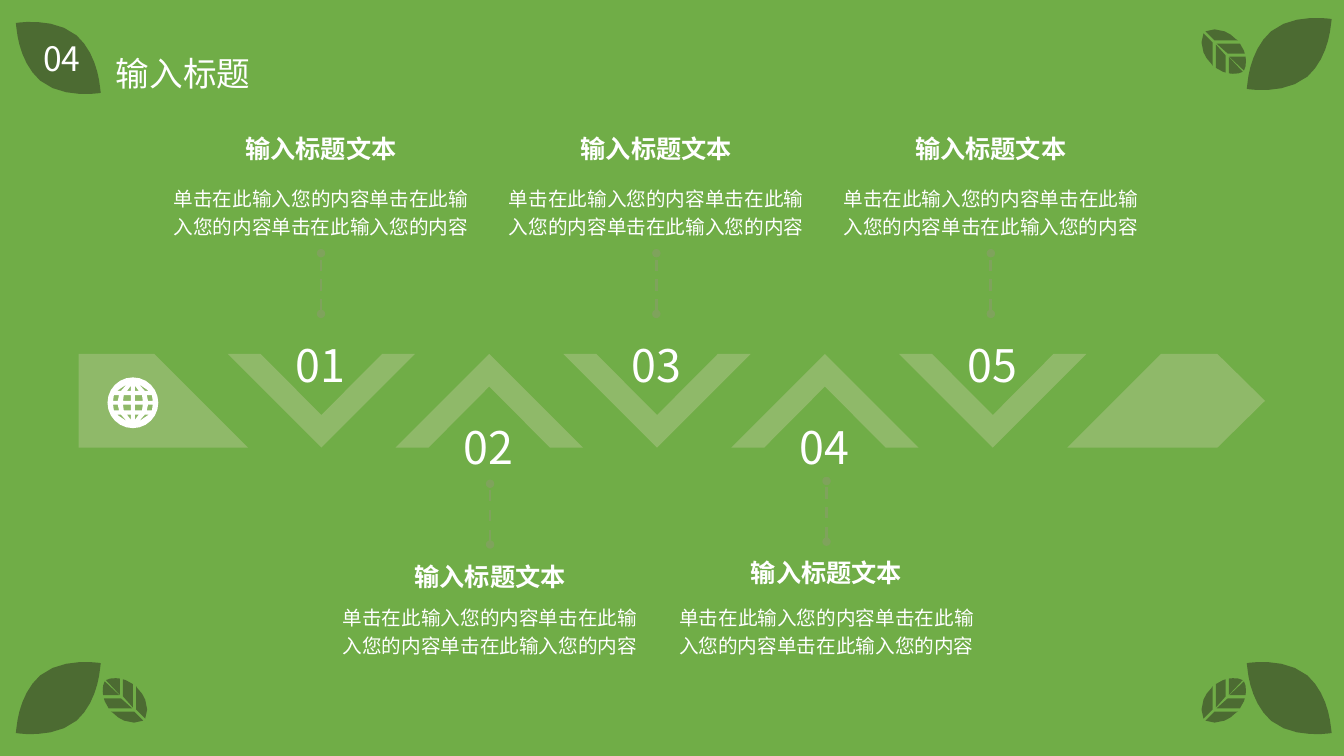
import math
from dataclasses import dataclass
from typing import Any, Optional

import pptx
import pptx.dml.color
import pptx.enum.dml
import pptx.enum.shapes
import pptx.enum.text
import pptx.oxml.ns
import pptx.util
from pptx.util import Cm

Seg = tuple[float, ...]
Path = list[Seg]
Align = pptx.enum.text.PP_ALIGN
Anchor = pptx.enum.text.MSO_ANCHOR


@dataclass(frozen=True)
class Theme:
    font: str = "Noto Sans CJK SC"
    ground: str = "70AD47"
    band: str = "8FB969"
    leaf: str = "4C6B32"
    link: str = "7FA35C"
    ink: str = "FFFFFF"
    digit: float = 32
    head: float = 24
    title: float = 18
    body: float = 14


@dataclass(frozen=True)
class Step:
    label: str
    hub: float
    link: float
    title: float
    body: float
    down: bool


@dataclass(frozen=True)
class Corner:
    x: float
    y: float
    flip_x: int
    flip_y: int
    twig: Optional[tuple[float, float]]


@dataclass(frozen=True)
class Style:
    size: float
    bold: bool = False
    align: Optional[Align] = None
    anchor: Anchor = Anchor.TOP
    wrap: bool = False
    inset: Optional[float] = None
    space: Optional[float] = None


THEME = Theme()
STEPS = [
    Step("01", 8.09, 6.38, 2.92, 4.39, True),
    Step("02", 12.35, 12.19, 13.72, 14.94, False),
    Step("03", 16.54, 6.38, 2.92, 4.39, True),
    Step("04", 20.83, 12.12, 13.61, 14.94, False),
    Step("05", 24.97, 6.38, 2.92, 4.39, True),
]
CORNERS = [
    Corner(1.47, 1.46, 1, -1, None),
    Corner(1.47, 17.59, 1, 1, (3.15, 17.65)),
    Corner(32.49, 17.59, -1, 1, (30.84, 17.65)),
    Corner(32.49, 1.36, -1, -1, (30.84, 1.3)),
]
MID, HALF, FIRST, PITCH = 10.1, 1.18, 8.1, 4.23
CHEVRON: Path = [(-2.36, -HALF), (0, HALF), (2.36, -HALF),
                 (1.53, -HALF), (0, 0.36), (-1.53, -HALF)]
START: Path = [(1.98, -HALF), (1.98, HALF), (6.25, HALF), (3.89, -HALF)]
FINISH: Path = [(29.26, -HALF), (26.9, HALF), (30.68, HALF), (31.88, 0), (30.68, -HALF)]
EDGE: Path = [(-1.07, 0.88, -1.07, 0.81, -1.05, 0.72),
              (-1.02, 0.42, -0.89, -0.19, -0.46, -0.57),
              (0.13, -1.05, 1.07, -0.88, 1.07, -0.88)]
VEINS: list[Path] = [
    [(0.28, 0.23), (0.28, -0.36), (0.31, -0.31), (0.43, -0.17), (0.51, -0.02),
     (0.56, 0.23), (0.51, 0.46)],
    [(-0.05, -0.1), (-0.05, -0.53), (0.02, -0.51), (0.2, -0.41), (0.2, 0.18)],
    [(-0.48, -0.51), (-0.37, -0.55), (-0.23, -0.56), (-0.13, -0.55), (-0.13, -0.14)],
]
PANES: list[Path] = [
    [(0.05, 0.05), (0.25, 0.05), (0.23, 0.19), (0.05, 0.19)],
    [(0.38, 0.05), (0.5, 0.05), (0.48, 0.19), (0.35, 0.19)],
    [(0.05, 0.3), (0.15, 0.3), (0.05, 0.43)],
    [(0.3, 0.3), (0.4, 0.3), (0.15, 0.47)],
]


def tint(code: str) -> pptx.dml.color.RGBColor:
    return pptx.dml.color.RGBColor.from_string(code)


def flip(path: Path, x: int, y: int) -> Path:
    return [tuple(n * (y if i % 2 else x) for i, n in enumerate(seg)) for seg in path]


def swap(path: Path) -> Path:
    return [(y, x) for x, y in path]


def trace(path: Path) -> Path:
    dots = [path[0][:2]]
    for seg in path[1:]:
        if len(seg) == 2:
            dots.append(seg)
            continue
        x, y = dots[-1]
        a, b, c, d, e, f = seg
        count = max(1, round(4 * math.dist((x, y), (e, f))))
        for k in range(1, count + 1):
            t = k / count
            u = 1 - t
            w = (u ** 3, 3 * u * u * t, 3 * u * t * t, t ** 3)
            dots.append((w[0] * x + w[1] * a + w[2] * c + w[3] * e,
                         w[0] * y + w[1] * b + w[2] * d + w[3] * f))
    return dots


def draw(slide: Any, paths: list[Path], x: float, y: float, fill: str) -> None:
    pen = None
    for path in paths:
        dots = [(Cm(x + a), Cm(y + b)) for a, b in trace(path)]
        if pen is None:
            pen = slide.shapes.build_freeform(*dots[0])
        else:
            pen.move_to(*dots[0])
        pen.add_line_segments(dots[1:], close=True)
    shape = pen.convert_to_shape()
    shape.shadow.inherit = False
    shape.fill.solid()
    shape.fill.fore_color.rgb = tint(fill)
    shape.line.fill.background()


def write(slide: Any, text: str, x: float, y: float, w: float, h: float, style: Style) -> None:
    frame = slide.shapes.add_textbox(Cm(x), Cm(y), Cm(w), Cm(h)).text_frame
    frame.word_wrap = style.wrap
    frame.vertical_anchor = style.anchor
    if style.inset is not None:
        frame.margin_left = frame.margin_right = frame.margin_bottom = Cm(0)
        frame.margin_top = Cm(style.inset)
    frame.text = text
    para = frame.paragraphs[0]
    para.alignment = style.align
    para.line_spacing = style.space
    run = para.runs[0]
    run.font.name = THEME.font
    run.font.size = pptx.util.Pt(style.size)
    run.font.bold = style.bold
    run.font.color.rgb = tint(THEME.ink)
    east = run.font._element.makeelement(pptx.oxml.ns.qn("a:ea"), {"typeface": THEME.font})
    run.font._element.append(east)


def join(slide: Any, x: float, top: float, size: float) -> None:
    link = slide.shapes.add_connector(
        pptx.enum.shapes.MSO_CONNECTOR.STRAIGHT, Cm(x), Cm(top + size), Cm(x), Cm(top))
    link.line.color.rgb = tint(THEME.link)
    link.line.width = pptx.util.Pt(0)
    link.line.dash_style = pptx.enum.dml.MSO_LINE.DASH
    props = link._element.spPr
    stroke = props.find(pptx.oxml.ns.qn("a:ln"))
    for end in ("a:headEnd", "a:tailEnd"):
        stroke.append(stroke.makeelement(pptx.oxml.ns.qn(end), {"type": "oval"}))
    props.append(props.makeelement(pptx.oxml.ns.qn("a:effectLst"), {}))


def main() -> None:
    deck = pptx.Presentation()
    deck.slide_width, deck.slide_height = Cm(33.87), Cm(19.05)
    slide = deck.slides.add_slide(deck.slide_layouts[6])
    slide.background.fill.solid()
    slide.background.fill.fore_color.rgb = tint(THEME.ground)

    digit, head = Style(THEME.digit), Style(THEME.head)
    title = Style(THEME.title, True, Align.CENTER, Anchor.BOTTOM, inset=0)
    body = Style(THEME.body, align=Align.CENTER, wrap=True, inset=0.2, space=1.2)

    draw(slide, [START], 0, MID, THEME.band)
    ring = [(0.64 * math.cos(k * math.pi / 12), 0.64 * math.sin(k * math.pi / 12))
            for k in range(24)]
    panes = [flip(pane, x, y) for pane in PANES for x in (1, -1) for y in (1, -1)]
    draw(slide, [ring, *panes], 3.35, 10.15, THEME.ink)
    draw(slide, [FINISH], 0, MID, THEME.band)

    for i, step in enumerate(STEPS):
        x = FIRST + PITCH * i
        draw(slide, [flip(CHEVRON, 1, 1 if step.down else -1)], x, MID, THEME.band)
        write(slide, step.label, x - 0.89, 8.38 if step.down else 10.46, 1.78, 1.63, digit)
        join(slide, step.hub, step.link, 1.53)
        write(slide, "输入标题文本", step.hub - 2.85, step.title, 5.7, 1.19, title)
        write(slide, "单击在此输入您的内容" * 3, step.hub - 3.74, step.body,
              7.48, 3.15 if step.down else 2.41, body)

    leaf = [EDGE[0][:2], *EDGE, *flip(EDGE, -1, -1)]
    twig = VEINS + [swap(vein) for vein in VEINS]
    for spot in CORNERS:
        draw(slide, [flip(leaf, spot.flip_x, spot.flip_y)], spot.x, spot.y, THEME.leaf)
        if spot.twig:
            veins = [flip(vein, spot.flip_x, spot.flip_y) for vein in twig]
            draw(slide, veins, *spot.twig, THEME.leaf)

    write(slide, "输入标题", 2.67, 1.22, 3.94, 1.27, head)
    write(slide, "04", 0.84, 0.84, 1.52, 1.27, head)
    deck.save("out.pptx")


if __name__ == "__main__":
    main()
